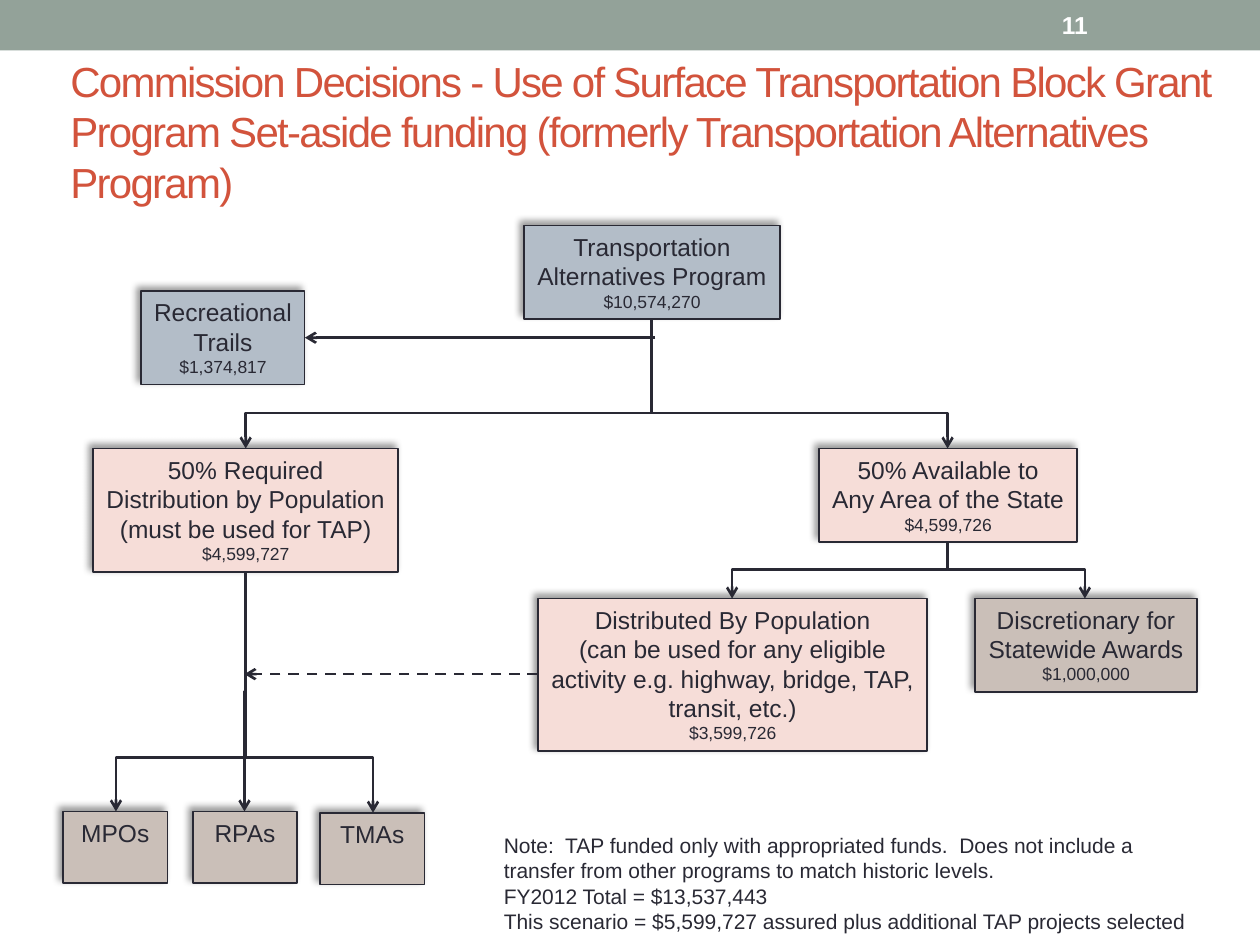
from dataclasses import dataclass

from lxml.etree import SubElement
from pptx import Presentation
from pptx.dml.color import RGBColor
from pptx.enum.dml import MSO_LINE
from pptx.enum.shapes import MSO_CONNECTOR, MSO_SHAPE
from pptx.enum.text import MSO_ANCHOR, PP_ALIGN
from pptx.oxml.ns import qn
from pptx.util import Inches, Pt


@dataclass(frozen=True)
class Theme:
    font: str = "Arial"
    ink: str = "292934"
    accent: str = "D2533C"
    white: str = "FFFFFF"
    band: str = "93A299"
    program: str = "B3BDC8"
    share: str = "F6DDD8"
    recipient: str = "CABFB8"
    title_size: int = 24
    label_size: int = 14
    note_size: int = 12
    amount_size: int = 10


class Deck:
    def __init__(self, theme):
        self.theme = theme
        self.prs = Presentation()
        self.prs.slide_width, self.prs.slide_height = Inches(10), Inches(7.5)
        self.s = self.prs.slides.add_slide(self.prs.slide_layouts[6])

    def add_lines(self, tf, lines, color, align=PP_ALIGN.LEFT, bold=False, spacing=None):
        """Fill tf with one paragraph per (text, size) pair."""
        for i, (text, size) in enumerate(lines):
            p = tf.paragraphs[0] if i == 0 else tf.add_paragraph()
            p.alignment = align
            r = p.add_run()
            r.text = text
            r.font.name, r.font.size, r.font.bold = self.theme.font, Pt(size), bold
            r.font.color.rgb = RGBColor.from_string(color)
            if spacing is not None:
                r._r.get_or_add_rPr().set("spc", str(spacing))

    def rect(self, at, fill):
        sp = self.s.shapes.add_shape(MSO_SHAPE.RECTANGLE, *map(Inches, at))
        sp.shadow.inherit = False
        sp.fill.solid()
        sp.fill.fore_color.rgb = RGBColor.from_string(fill)
        sp.line.fill.background()
        return sp

    def box(self, at, fill, labels, amount=None, border=1, wrap=False):
        t = self.theme
        sp = self.rect(at, fill)
        sp.line.color.rgb = RGBColor.from_string(t.ink)
        sp.line.width = Pt(border)
        self.add_shadow(sp)
        tf = sp.text_frame
        tf.word_wrap = wrap
        tf.vertical_anchor = MSO_ANCHOR.TOP
        lines = [(label, t.label_size) for label in labels]
        if amount:
            lines.append((amount, t.amount_size))
        self.add_lines(tf, lines, t.ink, PP_ALIGN.CENTER)

    def add_shadow(self, sp):
        effects = sp._element.spPr.find(qn("a:effectLst"))
        shadow = SubElement(effects, qn("a:outerShdw"), blurRad=str(Pt(4)),
                            dist=str(Pt(3)), dir=str(225 * 60000),
                            algn="br", rotWithShape="0")
        color = SubElement(shadow, qn("a:srgbClr"), val="000000")
        SubElement(color, qn("a:alpha"), val="40000")

    def text(self, at, lines, color, anchor=MSO_ANCHOR.TOP, wrap=True, **style):
        tf = self.s.shapes.add_textbox(*map(Inches, at)).text_frame
        tf.word_wrap = wrap
        tf.vertical_anchor = anchor
        self.add_lines(tf, lines, color, **style)

    def arrow(self, start, end, kind=MSO_CONNECTOR.STRAIGHT, dashed=False):
        cx = self.s.shapes.add_connector(kind, *map(Inches, (*start, *end)))
        cx.line.color.rgb = RGBColor.from_string(self.theme.ink)
        cx.line.width = Pt(1.5)
        if dashed:
            cx.line.dash_style = MSO_LINE.DASH
        SubElement(cx.line._get_or_add_ln(), qn("a:tailEnd"), type="arrow")
        SubElement(cx._element.spPr, qn("a:effectLst"))
        return cx

    def branch(self, start, end, bend_y):
        """Elbow arrow that runs down, across at bend_y, then down again."""
        (x1, y1), (x2, y2) = start, end
        drop, shift = y2 - y1, abs(x2 - x1)
        left, top = (x1 + x2 - drop) / 2, (y1 + y2 - shift) / 2
        cx = self.arrow((left, top), (left + drop, top + shift), MSO_CONNECTOR.ELBOW)
        spPr = cx._element.spPr
        xfrm = spPr.find(qn("a:xfrm"))
        # The preset bends sideways, so it is turned to run downwards.
        if x2 > x1:
            xfrm.set("rot", str(270 * 60000))
            xfrm.set("flipH", "1")
        else:
            xfrm.set("rot", str(90 * 60000))
        geom = spPr.find(qn("a:prstGeom"))
        guides = geom.find(qn("a:avLst"))
        if guides is None:
            guides = SubElement(geom, qn("a:avLst"))
        ratio = round((bend_y - y1) / drop * 100000)
        SubElement(guides, qn("a:gd"), name="adj1", fmla=f"val {ratio}")


def main():
    t = Theme()
    d = Deck(t)

    d.rect((0, 0, 10, 0.4), t.band)
    d.text((8.33, 0.02, 1.17, 0.36), [("11", t.label_size)], t.white,
           MSO_ANCHOR.MIDDLE, bold=True)
    title = ("Commission Decisions - Use of Surface Transportation Block Grant "
             "Program Set-aside funding (formerly Transportation Alternatives Program)")
    d.text((0.46, 0.58, 9.42, 0.92), [(title, t.title_size)], t.accent,
           MSO_ANCHOR.MIDDLE, spacing=-100)

    d.box((4.16, 1.79, 2.03, 0.74), t.program,
          ["Transportation", "Alternatives Program"], "$10,574,270")
    d.box((1.12, 2.31, 1.3, 0.74), t.program,
          ["Recreational", "Trails"], "$1,374,817", border=0.75)
    d.box((0.74, 3.56, 2.42, 0.98), t.share,
          ["50% Required", "Distribution by Population", "(must be used for TAP)"],
          "$4,599,727")
    d.box((6.5, 3.56, 2.05, 0.74), t.share,
          ["50% Available to", "Any Area of the State"], "$4,599,726")
    d.box((4.27, 4.75, 3.09, 1.21), t.share,
          ["Distributed By Population", "(can be used for any eligible",
           "activity e.g. highway, bridge, TAP,", "transit, etc.)"], "$3,599,726")
    d.box((7.74, 4.75, 1.76, 0.74), t.recipient,
          ["Discretionary for", "Statewide Awards"], "$1,000,000")
    for name, x, y in (("MPOs", 0.5, 6.44), ("RPAs", 1.53, 6.44), ("TMAs", 2.54, 6.45)):
        d.box((x, y, 0.83, 0.57), t.recipient, [name], wrap=True)

    program, required, available = (5.17, 2.53), (1.95, 4.54), (7.52, 4.3)
    trees = (
        (program, 3.28, ((1.95, 3.56), (7.52, 3.56))),
        (available, 4.52, ((5.81, 4.75), (8.61, 4.75))),
        (required, 6.01, ((0.92, 6.44), (2.96, 6.45))),
    )
    for start, bend_y, ends in trees:
        for end in ends:
            d.branch(start, end, bend_y)
    d.branch(required, (1.94, 6.44), 5.49)
    d.arrow((5.2, 2.68), (2.42, 2.68))
    d.arrow((4.27, 5.35), (1.94, 5.35), dashed=True)

    notes = (
        "Note:  TAP funded only with appropriated funds.  Does not include a",
        "transfer from other programs to match historic levels.",
        "FY2012 Total = $13,537,443",
        "This scenario = $5,599,727 assured plus additional TAP projects selected",
    )
    d.text((3.9, 6.56, 5.65, 0.91), [(n, t.note_size) for n in notes], t.ink, wrap=False)

    d.prs.save("out.pptx")


if __name__ == "__main__":
    main()
